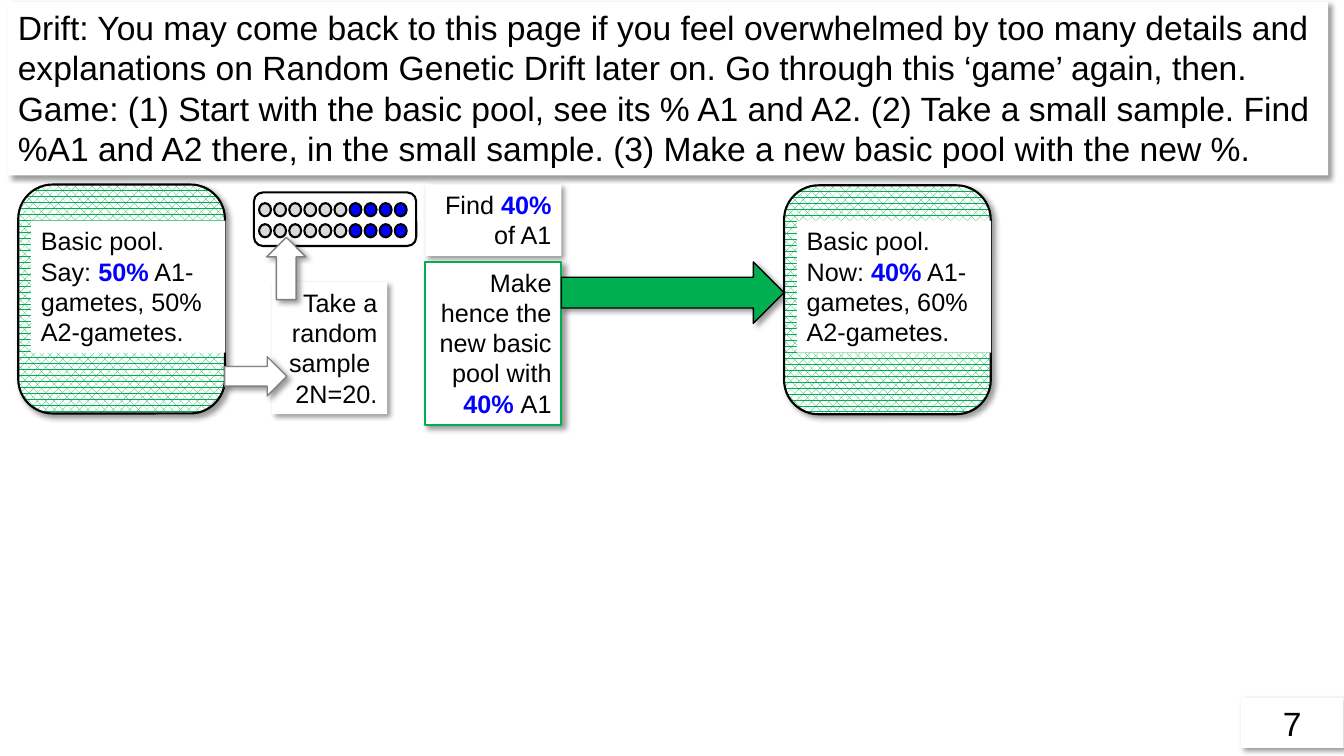
import pptx
import pptx.util
import pptx.dml.color
import pptx.enum.dml
import pptx.enum.shapes
import pptx.enum.text
import pptx.oxml
import pptx.oxml.ns

Cm = pptx.util.Cm
Pt = pptx.util.Pt
SHAPE = pptx.enum.shapes.MSO_SHAPE
ALIGN = pptx.enum.text.PP_ALIGN

COLORS = {
    "white": "FFFFFF",
    "black": "000000",
    "green": "00B050",
    "blue": "0000FF",
    "gray": "808080",
    "light": "D9D9D9",
}


def rgb(name):
    return pptx.dml.color.RGBColor.from_string(COLORS[name])


class Board:
    font = "Arial"
    shadow_xml = (
        '<a:outerShdw %s blurRad="50800" dist="38100" dir="2700000" algn="tl" rotWithShape="0">'
        '<a:srgbClr val="%s"><a:alpha val="40000"/></a:srgbClr></a:outerShdw>'
    )

    def __init__(self, slide):
        self.s = slide

    def finish(self, sp, fill, line, width, shadow):
        sp.fill.solid()
        sp.fill.fore_color.rgb = rgb(fill)
        if line:
            sp.line.color.rgb = rgb(line)
            sp.line.width = Pt(width)
        else:
            sp.line.fill.background()
        sp.shadow.inherit = False
        if shadow:
            effects = sp._element.spPr.find(pptx.oxml.ns.qn("a:effectLst"))
            xml = self.shadow_xml % (pptx.oxml.ns.nsdecls("a"), COLORS["black"])
            effects.append(pptx.oxml.parse_xml(xml))

    def shape(self, kind, box, fill, line, width=1, shadow=True, parent=None):
        sp = (parent or self.s).shapes.add_shape(kind, *map(Cm, box))
        self.finish(sp, fill, line, width, shadow)
        return sp

    def text(self, box, paragraphs, size=18, align=ALIGN.LEFT, line=None, shadow=True):
        sp = self.s.shapes.add_textbox(*map(Cm, box))
        self.finish(sp, "white", line, 1.5, shadow)
        tf = sp.text_frame
        tf.word_wrap = True
        tf.auto_size = pptx.enum.text.MSO_AUTO_SIZE.SHAPE_TO_FIT_TEXT
        for i, parts in enumerate(paragraphs):
            p = tf.add_paragraph() if i else tf.paragraphs[0]
            p.alignment = align
            p.font.name = self.font
            p.font.size = Pt(size)
            p.font.color.rgb = rgb("black")
            for part in parts:
                if part == "\n":
                    p.add_line_break()
                    continue
                r = p.add_run()
                r.text = part
                if part.strip().endswith("0%") and len(part) < 5:
                    r.font.bold = True
                    r.font.color.rgb = rgb("blue")

    def pool(self, left, top, parts):
        sp = self.shape(SHAPE.ROUNDED_RECTANGLE, (left, top, 5.21, 5.77), "white", "black", 1.5)
        sp.fill.patterned()
        sp.fill.pattern = pptx.enum.dml.MSO_PATTERN.PERCENT_60
        sp.fill.fore_color.rgb = rgb("green")
        sp.fill.back_color.rgb = rgb("white")
        self.text((left + 0.32, 5.56, 4.9, 3.33), [parts], shadow=False)

    def tray(self, columns, marked):
        group = self.s.shapes.add_group_shape()
        self.shape(SHAPE.ROUNDED_RECTANGLE, (6.4, 4.85, 4.09, 1.35),
                   "white", "black", 1.5, False, group)
        for top in (5.12, 5.65):
            for i in range(columns):
                fill = "blue" if i >= columns - marked else "light"
                self.shape(SHAPE.OVAL, (6.53 + 0.38 * i, top, 0.3, 0.33),
                           fill, "black", 1.5, False, group)


def main():
    prs = pptx.Presentation()
    prs.slide_width, prs.slide_height = Cm(33.87), Cm(19.05)
    b = Board(prs.slides.add_slide(prs.slide_layouts[6]))

    b.text((0.2, 0.05, 33.27, 4.37), [
        ["Drift: You may come back to this page if you feel overwhelmed by too many details and "
         "explanations on Random Genetic Drift later on. Go through this ‘game’ again, then."],
        ["Game: (1) Start with the basic pool, see its % A1 and A2. (2) Take a small sample. Find "
         "%A1 and A2 there, in the small sample. (3) Make a new basic pool with the new %."],
    ], size=24)
    b.text((31.27, 17.58, 2.59, 1.27), [["7"]], size=24, align=ALIGN.CENTER)

    b.pool(0.46, 4.65, ["Basic pool. Say: ", "50%", " A1-gametes, 50% A2-gametes."])
    b.text((6.86, 7.11, 2.9, 3.33), [["Take a random sample ", "\n", "2N=20."]], align=ALIGN.RIGHT)
    b.shape(SHAPE.RIGHT_ARROW, (5.66, 8.99, 1.57, 0.99), "white", "gray")
    b.text((10.72, 4.65, 3.43, 1.8), [["Find ", "40%", " of A1"]], align=ALIGN.RIGHT)
    b.text((10.72, 6.6, 3.43, 4.11), [["Make hence the new basic pool with ", "40% ", "A1"]],
           align=ALIGN.RIGHT, line="green")
    b.shape(SHAPE.RIGHT_ARROW, (14.15, 6.6, 5.61, 1.55), "green", "black")
    b.pool(19.76, 4.67, ["Basic pool. Now: ", "40%", " A1-gametes, 60% A2-gametes."])
    b.tray(columns=10, marked=4)
    b.shape(SHAPE.UP_ARROW, (6.72, 5.98, 0.99, 1.57), "white", "gray")

    prs.save("out.pptx")


if __name__ == "__main__":
    main()
